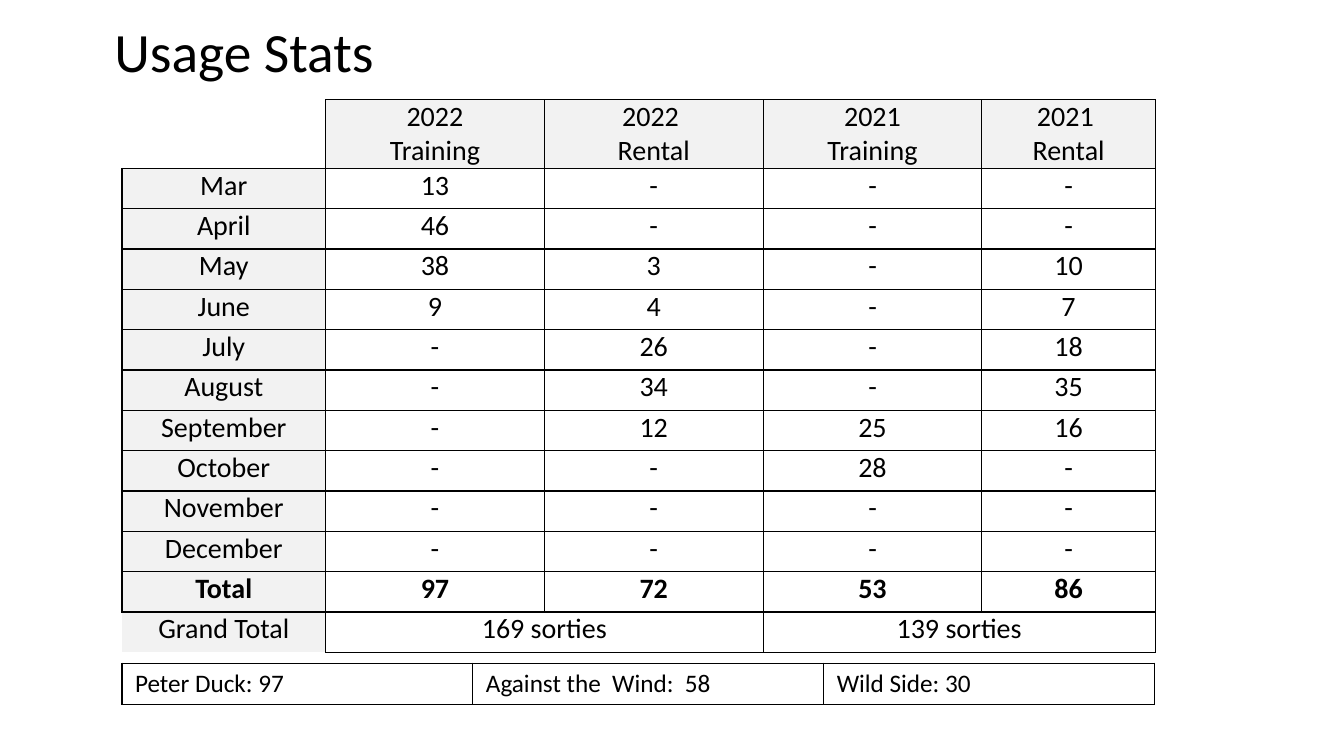
from dataclasses import dataclass

from lxml import etree
from pptx import Presentation
from pptx import util as u
from pptx.dml.color import RGBColor
from pptx.enum import text
from pptx.oxml.ns import qn

COLORS = {"ink": "000000", "label": "F2F2F2"}
FONT = "Calibri"
NO_STYLE = "{2D5ABB26-0587-4C30-8999-92F81FD0307C}"
LEFT, WIDTH = 1.21, 10.24

USAGE = [
    ["", "2022\nTraining", "2022 \nRental", "2021\nTraining", "2021 \nRental"],
    ["Mar", "13", "-", "-", "-"],
    ["April", "46", "-", "-", "-"],
    ["May", "38", "3", "-", "10"],
    ["June", "9", "4", "-", "7"],
    ["July", "-", "26", "-", "18"],
    ["August", "-", "34", "-", "35"],
    ["September", "-", "12", "25", "16"],
    ["October", "-", "-", "28", "-"],
    ["November", "-", "-", "-", "-"],
    ["December", "-", "-", "-", "-"],
    ["Total", "97", "72", "53", "86"],
    ["Grand Total", "169 sorties", "", "139 sorties", ""],
]
BOATS = [["Peter Duck: 97", "Against the  Wind:  58", "Wild Side: 30"]]
TOTAL_ROW, GRAND_ROW = len(USAGE) - 2, len(USAGE) - 1


@dataclass
class CellStyle:
    size: float
    margin_x: float
    margin_y: float
    align: text.PP_ALIGN
    bold: bool = False
    fill: str = ""
    borders: str = "LRTB"


def set_font(p, size: float, bold: bool = False) -> None:
    p.font.name = FONT
    p.font.size = u.Pt(size)
    p.font.bold = bold
    p.font.color.rgb = RGBColor.from_string(COLORS["ink"])


def set_borders(cell, sides: str) -> None:
    """Draw the sides named by letter (L, R, T, B) and clear the others."""
    tc_pr = cell._tc.get_or_add_tcPr()
    for index, side in enumerate("LRTB"):
        ln = etree.Element(qn(f"a:ln{side}"), w=str(u.Pt(1)))
        if side in sides:
            fill = etree.SubElement(ln, qn("a:solidFill"))
            etree.SubElement(fill, qn("a:srgbClr"), val=COLORS["ink"])
        else:
            etree.SubElement(ln, qn("a:noFill"))
        tc_pr.insert(index, ln)


def format_cell(cell, content: str, style: CellStyle) -> None:
    cell.text = content
    cell.margin_left = cell.margin_right = u.Inches(style.margin_x)
    cell.margin_top = cell.margin_bottom = u.Inches(style.margin_y)
    for p in cell.text_frame.paragraphs:
        p.alignment = style.align
        set_font(p, style.size, style.bold)
    if style.fill:
        cell.fill.solid()
        cell.fill.fore_color.rgb = RGBColor.from_string(style.fill)
    else:
        cell.fill.background()
    set_borders(cell, style.borders)


def add_plain_table(s, top: float, widths: list[float], heights: list[float]):
    table = s.shapes.add_table(
        len(heights), len(widths), u.Inches(LEFT), u.Inches(top),
        u.Inches(WIDTH), u.Inches(sum(heights))).table
    table.first_row = table.horz_banding = False
    table._tbl.tblPr.find(qn("a:tableStyleId")).text = NO_STYLE
    for column, width in zip(table.columns, widths):
        column.width = u.Inches(width)
    for row, height in zip(table.rows, heights):
        row.height = u.Inches(height)
    return table


def usage_style(row: int, col: int) -> CellStyle:
    style = CellStyle(20, 0.1, 0, text.PP_ALIGN.CENTER, bold=row == TOTAL_ROW)
    if (row == 0) != (col == 0):
        style.fill = COLORS["label"]
    if col == 0:
        style.borders = {0: "RB", GRAND_ROW: "RT"}.get(row, "LRTB")
    return style


def add_title(s) -> None:
    title = s.shapes.title
    title.left, title.top = u.Inches(0), u.Inches(0.22)
    title.width, title.height = u.Inches(4.84), u.Inches(0.64)
    tf = title.text_frame
    tf.text = "Usage Stats"
    tf.auto_size = text.MSO_AUTO_SIZE.NONE
    tf.vertical_anchor = text.MSO_ANCHOR.MIDDLE
    p = tf.paragraphs[0]
    p.alignment = text.PP_ALIGN.CENTER
    p.line_spacing = 0.9
    set_font(p, 39.6)


def add_usage_table(s) -> None:
    table = add_plain_table(s, 0.99, [2.02, 2.17, 2.17, 2.17, 1.72],
                            [0.68] + [0.4] * GRAND_ROW)
    for r, values in enumerate(USAGE):
        for c, value in enumerate(values):
            format_cell(table.cell(r, c), value, usage_style(r, c))
    for c in (1, 3):
        table.cell(GRAND_ROW, c).merge(table.cell(GRAND_ROW, c + 1))


def add_boat_table(s) -> None:
    table = add_plain_table(s, 6.58, [3.48, 3.48, 3.28], [0.41])
    style = CellStyle(18, 0.13, 0.05, text.PP_ALIGN.LEFT)
    for c, value in enumerate(BOATS[0]):
        format_cell(table.cell(0, c), value, style)


def main() -> None:
    prs = Presentation()
    prs.slide_width, prs.slide_height = u.Inches(13.33), u.Inches(7.5)
    s = prs.slides.add_slide(prs.slide_layouts[5])
    add_title(s)
    add_usage_table(s)
    add_boat_table(s)
    prs.save("out.pptx")


if __name__ == "__main__":
    main()
